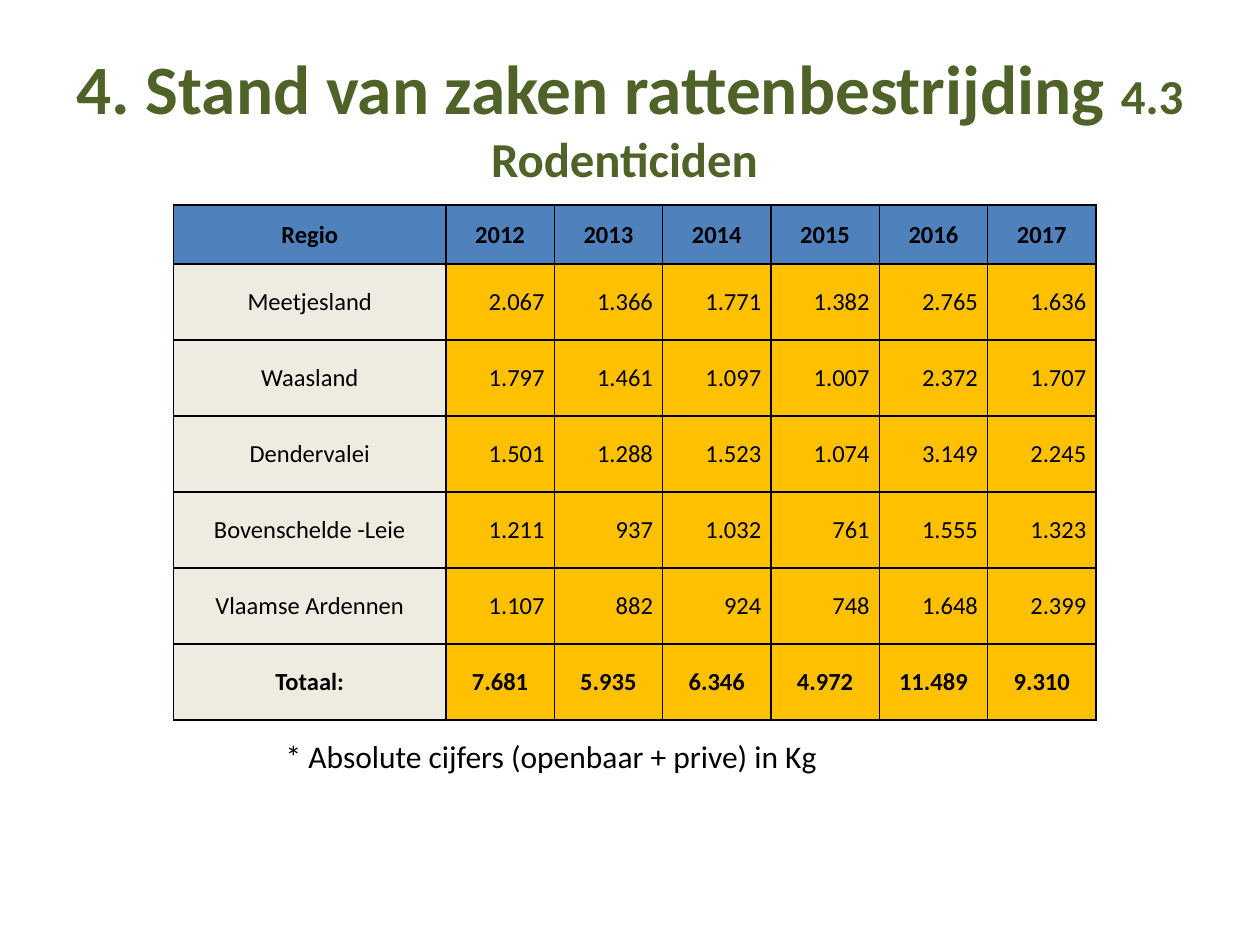
from pptx import Presentation
from pptx.dml.color import RGBColor
from pptx.enum import text as t
from pptx.oxml import parse_xml
from pptx.oxml.ns import nsdecls
from pptx.util import Pt

BLACK, GREEN, BLUE, CREAM, AMBER = "000000", "4F6228", "4F81BD", "EEECE1", "FFC000"
CENTER, RIGHT, LEFT = t.PP_ALIGN.CENTER, t.PP_ALIGN.RIGHT, t.PP_ALIGN.LEFT

HEADER = ["Regio", "2012", "2013", "2014", "2015", "2016", "2017"]
REGIONS = [
    ["Meetjesland", "2.067", "1.366", "1.771", "1.382", "2.765", "1.636"],
    ["Waasland", "1.797", "1.461", "1.097", "1.007", "2.372", "1.707"],
    ["Dendervalei", "1.501", "1.288", "1.523", "1.074", "3.149", "2.245"],
    ["Bovenschelde -Leie", "1.211", "937", "1.032", "761", "1.555", "1.323"],
    ["Vlaamse Ardennen", "1.107", "882", "924", "748", "1.648", "2.399"],
]
TOTALS = ["Totaal:", "7.681", "5.935", "6.346", "4.972", "11.489", "9.310"]


def color(hex_value):
    """Return the colour for a hex string."""
    return RGBColor.from_string(hex_value)


def add_text(paragraph, wording, size=14, bold=False, fill=BLACK, align=CENTER):
    """Append a formatted run to a paragraph."""
    paragraph.alignment = align
    run = paragraph.add_run()
    run.text = wording
    run.font.name = "Calibri"
    run.font.size = Pt(size)
    run.font.bold = bold
    run.font.color.rgb = color(fill)


def place(shape, left, top, width, height):
    """Position a shape, with lengths in points."""
    shape.left, shape.top = Pt(left), Pt(top)
    shape.width, shape.height = Pt(width), Pt(height)


def add_title(slide, box):
    """Fill the title placeholder with a heading and a smaller subheading."""
    title = slide.shapes.title
    place(title, *box)
    frame = title.text_frame
    frame.auto_size = t.MSO_AUTO_SIZE.NONE
    frame.vertical_anchor = t.MSO_ANCHOR.MIDDLE
    paragraph = frame.paragraphs[0]
    add_text(paragraph, "4. Stand van zaken rattenbestrijding ", size=39.6, bold=True, fill=GREEN)
    add_text(paragraph, "4.3 Rodenticiden ", size=27.9, bold=True, fill=GREEN)


def add_borders(cell):
    """Draw a thin black line on all four sides of a cell."""
    properties = cell._tc.get_or_add_tcPr()
    for position, side in enumerate(("lnL", "lnR", "lnT", "lnB")):
        properties.insert(position, parse_xml(
            f'<a:{side} {nsdecls("a")} w="{Pt(1)}"><a:solidFill>'
            f'<a:srgbClr val="{BLACK}"/></a:solidFill></a:{side}>'))


def fill_cell(cell, wording, fill, **text_format):
    """Format one table cell and write its text."""
    cell.fill.solid()
    cell.fill.fore_color.rgb = color(fill)
    cell.vertical_anchor = t.MSO_ANCHOR.MIDDLE
    cell.margin_left = cell.margin_top = Pt(0.75)
    cell.margin_bottom = Pt(0)
    cell.margin_right = Pt(5.5 if text_format.get("align") == RIGHT else 0.75)
    add_borders(cell)
    add_text(cell.text_frame.paragraphs[0], wording, **text_format)


def add_rodenticide_table(slide, box, region_width=155.6, header_height=33.8):
    """Draw the yearly figures for each region within the box."""
    rows = [HEADER, *REGIONS, TOTALS]
    left, top, width, height = map(Pt, box)
    table = slide.shapes.add_table(len(rows), len(HEADER), left, top, width, height).table
    year_width = (box[2] - region_width) / (len(HEADER) - 1)
    row_height = (box[3] - header_height) / (len(rows) - 1)
    for index, column in enumerate(table.columns):
        column.width = Pt(year_width if index else region_width)
    for row_index, values in enumerate(rows):
        table.rows[row_index].height = Pt(row_height if row_index else header_height)
        heavy = values in (HEADER, TOTALS)
        for index, value in enumerate(values):
            fill = BLUE if row_index == 0 else AMBER if index else CREAM
            align = RIGHT if index and not heavy else CENTER
            fill_cell(table.cell(row_index, index), value, fill, bold=heavy, align=align)


def add_footnote(slide, box):
    """Add the note on units below the table."""
    frame = slide.shapes.add_textbox(*map(Pt, box)).text_frame
    frame.word_wrap = True
    add_text(frame.paragraphs[0], "* Absolute cijfers (openbaar + prive) in Kg", size=18, align=LEFT)


def main():
    """Build and save the presentation."""
    presentation = Presentation()
    presentation.slide_width, presentation.slide_height = Pt(720), Pt(540)
    slide = presentation.slides.add_slide(presentation.slide_layouts[5])
    add_title(slide, (36, 21.6, 648, 90))
    add_footnote(slide, (156.2, 417.6, 380, 29))
    add_rodenticide_table(slide, (99.2, 117, 527.2, 294.5))
    presentation.save("out.pptx")


if __name__ == "__main__":
    main()
